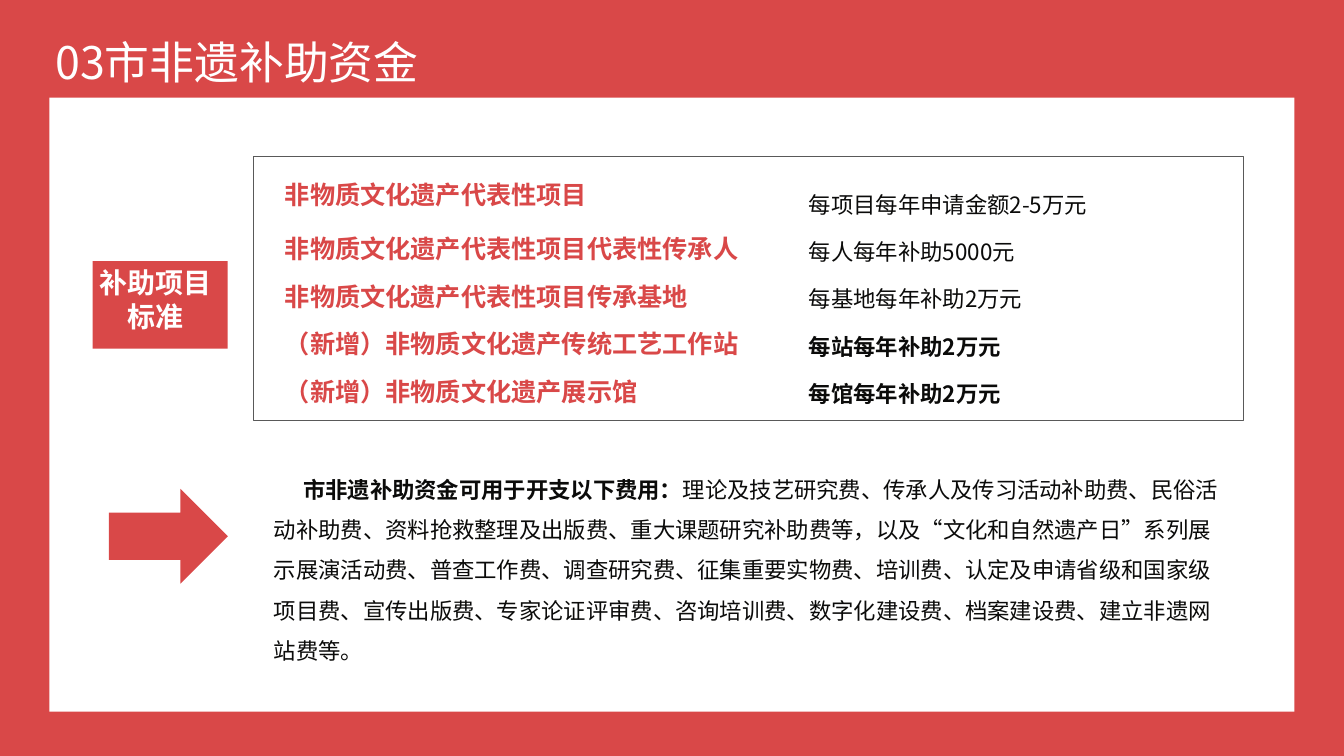
from lxml.etree import SubElement
from pptx import Presentation
from pptx.dml.color import RGBColor
from pptx.enum.shapes import MSO_SHAPE
from pptx.enum.text import PP_ALIGN
from pptx.oxml.ns import qn
from pptx.util import Inches, Pt

TITLE = "03市非遗补助资金"
BADGE = "补助项目标准"
STANDARDS = [  # project, yearly subsidy, newly added
    ("非物质文化遗产代表性项目", "每项目每年申请金额2-5万元", False),
    ("非物质文化遗产代表性项目代表性传承人", "每人每年补助5000元", False),
    ("非物质文化遗产代表性项目传承基地", "每基地每年补助2万元", False),
    ("（新增）非物质文化遗产传统工艺工作站", "每站每年补助2万元", True),
    ("（新增）非物质文化遗产展示馆", "每馆每年补助2万元", True),
]
USES_LEAD = "市非遗补助资金可用于开支以下费用："
USES = (
    "理论及技艺研究费、传承人及传习活动补助费、民俗活动补助费、资料抢救整理及出版费、"
    "重大课题研究补助费等，以及“文化和自然遗产日”系列展示展演活动费、普查工作费、"
    "调查研究费、征集重要实物费、培训费、认定及申请省级和国家级项目费、宣传出版费、"
    "专家论证评审费、咨询培训费、数字化建设费、档案建设费、建立非遗网站费等。"
)

FONT = "Noto Sans CJK SC"
RED, WHITE, INK, GREY = "D94848", "FFFFFF", "0B0B0A", "595959"

# Areas as left, top, width, height in percent of the slide
PAGE = (0, 0, 100, 100)
PANEL = (3.67, 12.93, 92.65, 81.2)
TITLE_AREA = (3.37, 3.87, 33.06, 15.73)
BADGE_AREA = (6.9, 34.53, 10.04, 11.6)
BADGE_TEXT = (6.3, 34.53, 10.57, 10.27)
FRAME = (18.89, 20.67, 73.61, 34.93)
ARROW = (8.1, 64.67, 8.85, 12.53)
USES_AREA = (18.74, 60.53, 73.76, 28.4)
ROW_TOP, ROW_STEP, ROW_HEIGHT = 22.8, 6.27, 6.6
FIRST_PROJECT_LIFT = 0.93
PROJECT_COLUMN, SUBSIDY_COLUMN = (20.46, 38), (59.45, 33.43)

deck = Presentation()
deck.slide_width, deck.slide_height = Inches(13.34), Inches(7.5)
slide = deck.slides.add_slide(deck.slide_layouts[6])


def color(value):
    return RGBColor.from_string(value)


def place(area):
    """Turn percent of the slide into lengths."""
    sides = (deck.slide_width, deck.slide_height) * 2
    return [round(share * side / 100) for share, side in zip(area, sides)]


def add_block(kind, area, fill=None, line=None):
    block = slide.shapes.add_shape(kind, *place(area))
    block.shadow.inherit = False
    if fill:
        block.fill.solid()
        block.fill.fore_color.rgb = color(fill)
    else:
        block.fill.background()
    if line:
        block.line.color.rgb = color(line)
        block.line.width = Pt(0.75)
    else:
        block.line.fill.background()


def add_text(area, runs, size, ink, spacing=None, align=PP_ALIGN.LEFT):
    """Write one paragraph from (text, bold) runs and return it."""
    frame = slide.shapes.add_textbox(*place(area)).text_frame
    frame.word_wrap = True
    paragraph = frame.paragraphs[0]
    for name, value in {"alignment": align, "line_spacing": spacing}.items():
        setattr(paragraph, name, value)
    for text, bold in runs:
        run = paragraph.add_run()
        run.text = text
        run.font.color.rgb = color(ink)
        for name, value in {"name": FONT, "size": Pt(size), "bold": bold}.items():
            setattr(run.font, name, value)
        SubElement(run.font._element, qn("a:ea"), typeface=FONT)
    return paragraph


add_block(MSO_SHAPE.RECTANGLE, PAGE, RED)
add_block(MSO_SHAPE.RECTANGLE, PANEL, WHITE)
add_text(TITLE_AREA, [(TITLE, False)], 32, WHITE, align=PP_ALIGN.JUSTIFY)

uses = add_text(USES_AREA, [(USES_LEAD, True), (USES, False)], 16, INK, 1.5)
uses_format = uses._p.get_or_add_pPr()
for side, inches in {"marL": 0.12, "indent": 0.29}.items():
    uses_format.set(side, str(Inches(inches)))

add_block(MSO_SHAPE.RECTANGLE, BADGE_AREA, RED)
add_text(BADGE_TEXT, [(BADGE, True)], 20, WHITE, Pt(24), PP_ALIGN.CENTER)

add_block(MSO_SHAPE.RECTANGLE, FRAME, line=GREY)
for row, (project, subsidy, is_new) in enumerate(STANDARDS):
    top = ROW_TOP + row * ROW_STEP
    project_top = top if row else top - FIRST_PROJECT_LIFT
    for (left, width), y, text, bold, size, ink, spacing in (
        (PROJECT_COLUMN, project_top, project, True, 18, RED, Pt(28)),
        (SUBSIDY_COLUMN, top, subsidy, is_new, 16, INK, 1.5),
    ):
        add_text((left, y, width, ROW_HEIGHT), [(text, bold)], size, ink, spacing)

add_block(MSO_SHAPE.RIGHT_ARROW, ARROW, RED)

deck.save("out.pptx")
